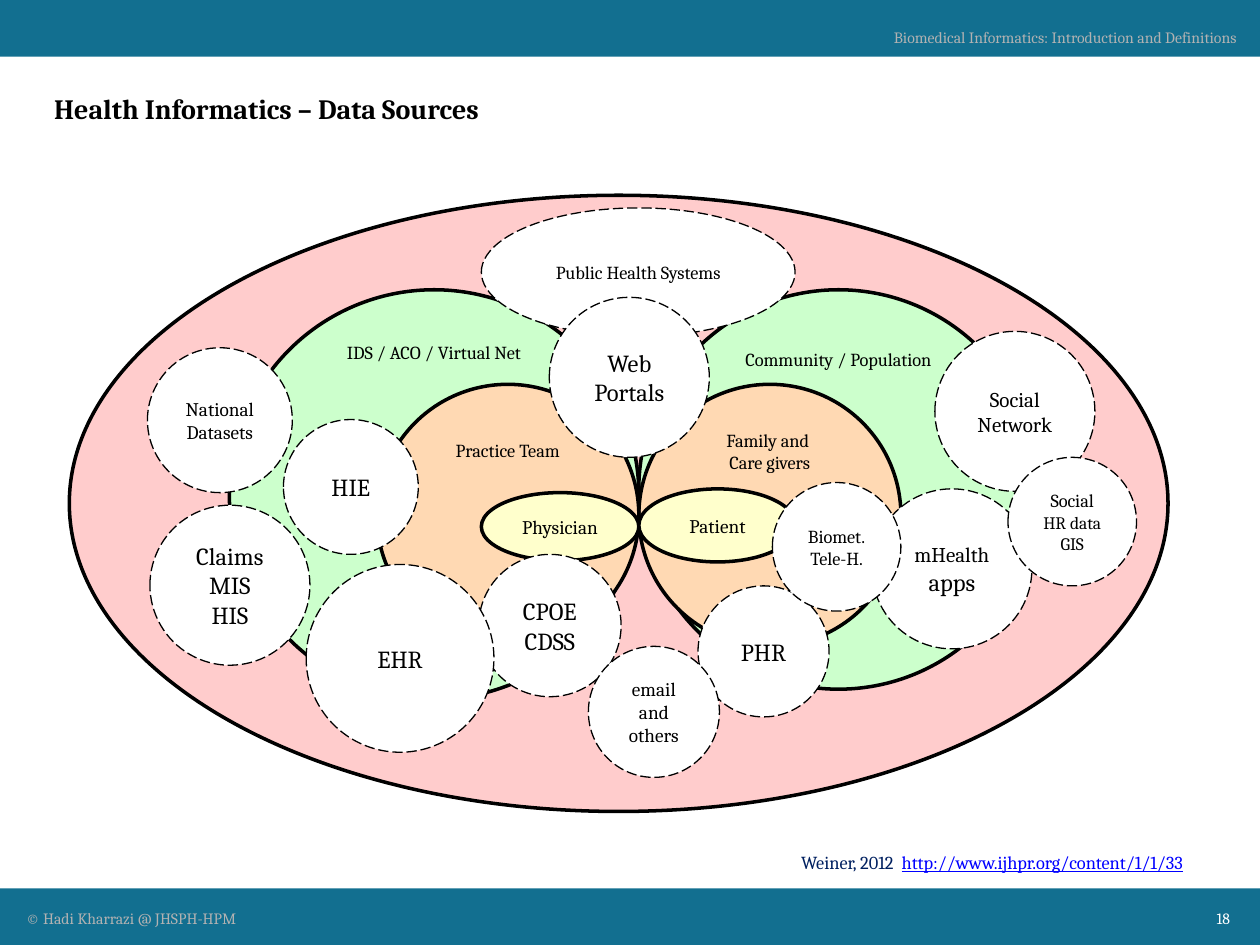
from pptx import Presentation
from pptx.dml.color import RGBColor
from pptx.enum.dml import MSO_LINE
from pptx.enum.shapes import MSO_SHAPE
from pptx.enum.text import MSO_ANCHOR, PP_ALIGN
from pptx.util import Inches, Pt

TEAL = RGBColor(0x12, 0x6F, 0x90)
GRAY = RGBColor(0xB2, 0xB2, 0xB2)
BLACK = RGBColor(0, 0, 0)
WHITE = RGBColor(0xFF, 0xFF, 0xFF)
PINK = RGBColor(0xFF, 0xCC, 0xCC)
GREEN = RGBColor(0xCC, 0xFF, 0xCC)
PEACH = RGBColor(0xFF, 0xD9, 0xB3)
CREAM = RGBColor(0xFF, 0xFF, 0xCC)
NAVY = RGBColor(0x00, 0x20, 0x60)
BLUE = RGBColor(0x00, 0x00, 0xFF)

COLS, ROWS = 100, 75
FONT = "Cambria"


class Board:
    """Holds the style and the current slide, laid out on a grid of 100 by 75."""

    def __init__(self, deck):
        self.col = deck.slide_width / COLS
        self.row = deck.slide_height / ROWS
        self.slide = deck.slides.add_slide(deck.slide_layouts[5])

    def place(self, x, y, w, h):
        return [round(n) for n in (x * self.col, y * self.row, w * self.col, h * self.row)]

    def run(self, para, text, size, color=BLACK, bold=False, under=False):
        run = para.add_run()
        run.text = text
        font = run.font
        font.name, font.size, font.bold = FONT, Pt(size), bold
        font.underline = under
        font.color.rgb = color

    def title(self, spot, text):
        shape = self.slide.shapes.title
        shape.left, shape.top, shape.width, shape.height = self.place(*spot)
        frame = shape.text_frame
        frame.vertical_anchor = MSO_ANCHOR.MIDDLE
        para = frame.paragraphs[0]
        para.alignment = PP_ALIGN.LEFT
        self.run(para, text, 16, bold=True)

    def shape(self, kind, spot, fill):
        shape = self.slide.shapes.add_shape(kind, *self.place(*spot))
        shape.shadow.inherit = False
        shape.fill.solid()
        shape.fill.fore_color.rgb = fill
        return shape

    def band(self, y):
        self.shape(MSO_SHAPE.RECTANGLE, (0, y, COLS, 4.5), TEAL).line.fill.background()

    def oval(self, spot, fill, lines=(), dash=False, top=None):
        shape = self.shape(MSO_SHAPE.OVAL, spot, fill)
        shape.line.color.rgb = BLACK
        shape.line.width = Pt(0.75 if dash else 2)
        if dash:
            shape.line.dash_style = MSO_LINE.LONG_DASH
        frame = shape.text_frame
        frame.word_wrap = True
        frame.vertical_anchor = MSO_ANCHOR.MIDDLE
        if top is not None:
            frame.vertical_anchor = MSO_ANCHOR.TOP
            frame.margin_top = Inches(top)
        for num, (text, size) in enumerate(lines):
            para = frame.add_paragraph() if num else frame.paragraphs[0]
            para.alignment = PP_ALIGN.CENTER
            for part, words in enumerate(text.split("\n")):
                if part:
                    para.add_line_break()
                self.run(para, words, size)

    def disc(self, x, y, size, *lines):
        self.oval((x, y, size, size), WHITE, lines, dash=True)

    def text(self, spot, runs, align=PP_ALIGN.LEFT, wrap=True):
        frame = self.slide.shapes.add_textbox(*self.place(*spot)).text_frame
        frame.word_wrap = wrap
        para = frame.paragraphs[0]
        para.alignment = align
        for words, size, color, under in runs:
            self.run(para, words, size, color, under=under)


def main():
    """Build the slide and save it."""
    deck = Presentation()
    deck.slide_width, deck.slide_height = Inches(10), Inches(7.5)
    board = Board(deck)

    for y in (0, ROWS - 4.5):
        board.band(y)
    board.text((1.1, 71.6, 62.1, 2.5), [("© Hadi Kharrazi @ JHSPH-HPM", 9, GRAY, False)])
    board.text((67.2, 1.7, 31.9, 2.5),
               [("Biomedical Informatics: Introduction and Definitions", 9, GRAY, False)],
               PP_ALIGN.RIGHT, wrap=False)
    board.title((3.3, 6.6, 93.3, 4), "Health Informatics – Data Sources")

    mid = 50.7
    board.oval((5.5, 15.5, 87.2, 48.9), PINK)
    rings = [
        (mid, 23, 31.7, GREEN, "Community / Population", 0),
        (mid - 32.5, 23, 32.5, GREEN, "IDS / ACO / Virtual Net", -0.07),
        (mid, 30.5, 20.8, PEACH, "Family and \nCare givers", 0.05),
        (mid - 20.8, 30.5, 20.8, PEACH, "Practice Team", 0.13),
    ]
    for x, y, size, fill, label, top in rings:
        board.oval((x, y, size, size), fill, [(label, 10.5)], top=top)
    board.oval((mid - 12.5, 39.1, 12.5, 5.4), CREAM, [("Physician", 11)])
    board.oval((mid, 38.8, 12.5, 5.8), CREAM, [("Patient", 11)])

    board.disc(11.9, 40.1, 12.7, ("Claims", 14), ("MIS", 14), ("HIS", 14))
    board.disc(38, 44, 11.3, ("CPOE", 14), ("CDSS", 14))
    board.disc(24.3, 44.8, 14.9, ("EHR", 14))
    board.disc(55.4, 46.5, 10.4, ("PHR", 14))
    board.disc(69.2, 38.8, 12.7, ("mHealth", 12), ("apps", 14))
    board.disc(61.3, 38.3, 10.2, ("Biomet.\nTele-H.", 10.5))
    board.disc(11.7, 27.6, 11.5, ("National Datasets", 11))
    board.disc(22.5, 33.3, 10.7, ("HIE", 14))
    board.disc(74.2, 26.3, 12.7, ("Social Network", 12))
    board.disc(80, 36.3, 10.2, ("Social", 10.5), ("HR data", 10), ("GIS", 10))
    board.oval((38.2, 16.5, 24.9, 10.2), WHITE, [("Public Health Systems", 10.5)], dash=True)
    board.disc(43.6, 23.6, 12.7, ("Web Portals", 14))
    board.disc(46.7, 51.3, 10.4, ("email and others", 11))

    board.text((62.6, 67.1, 35.9, 2.8),
               [("Weiner, 2012  ", 10.5, NAVY, False),
                ("http://www.ijhpr.org/content/1/1/33", 10.5, BLUE, True)])
    board.text((92.1, 71.6, 6.5, 2.5), [("18", 9, WHITE, False)], PP_ALIGN.RIGHT)
    deck.save("out.pptx")


if __name__ == "__main__":
    main()
